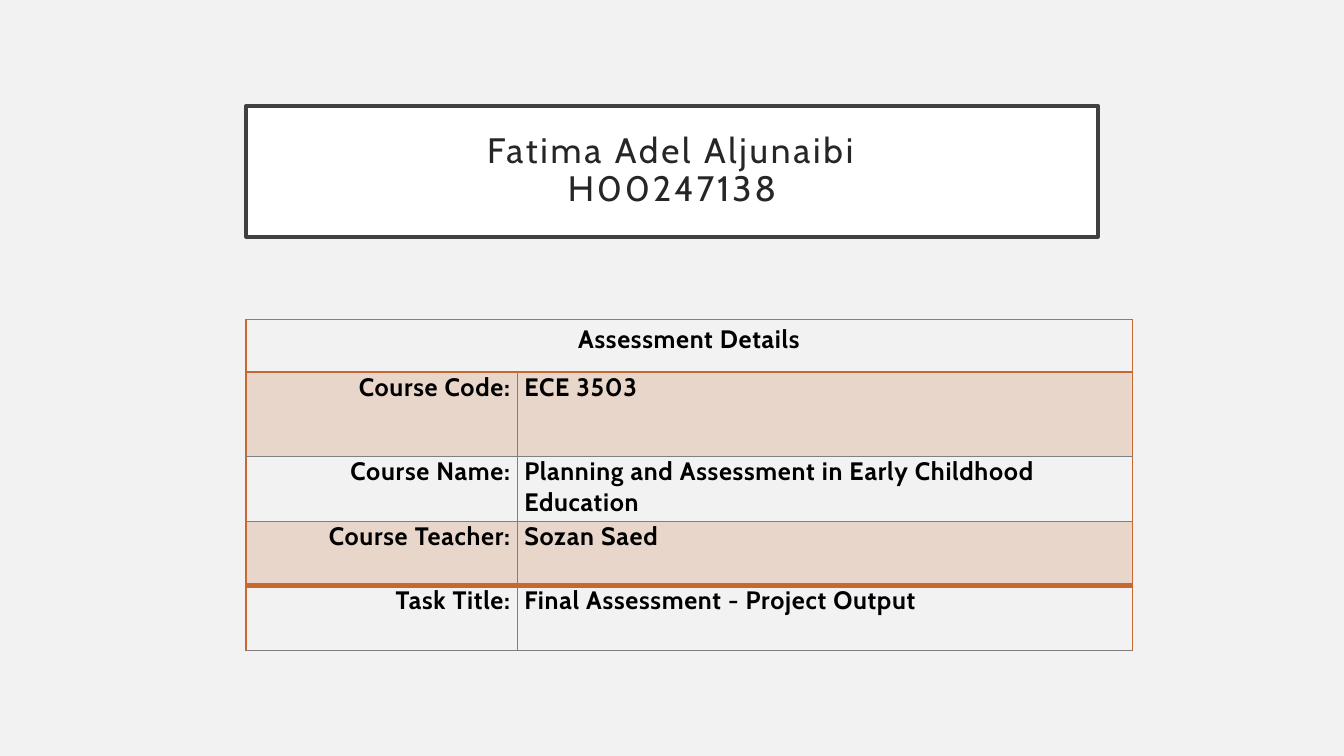
from lxml.etree import SubElement
from pptx import Presentation
from pptx.dml.color import RGBColor
from pptx.enum.shapes import MSO_SHAPE as Shape
from pptx.enum.text import MSO_ANCHOR as Anchor, PP_ALIGN as Align
from pptx.oxml import parse_xml
from pptx.oxml.ns import nsdecls, qn
from pptx.util import Inches, Pt

FONT = "Cabin"
ORANGE, GREY = "C96731", "808080"
LEFT = 2.44
DETAILS = [
    ("Course Code:", "ECE 3503"),
    ("Course Name:", "Planning and Assessment in Early Childhood Education"),
    ("Course Teacher:", "Sozan Saed"),
    ("Task Title:", "Final Assessment - Project Output"),
]
COLUMN_WIDTHS = [2.69, 6.1]
ROW_HEIGHTS = [0.52, 0.84, 0.64, 0.64, 0.64]
# Horizontal rules from the top edge to the bottom edge: colour, points
RULES = [(GREY, 0.75), (ORANGE, 2), (GREY, 0.75), (GREY, 0.75),
         (ORANGE, 4), (GREY, 0.75)]


def color(value):
    return RGBColor.from_string(value)


def style_paragraph(paragraph, size, ink, align, tracking, bold=False):
    paragraph.alignment = align
    font = paragraph.font
    font.name, font.size, font.bold = FONT, Pt(size), bold
    font.color.rgb = color(ink)
    for run in paragraph.runs:
        run.font._element.set("spc", str(int(tracking * 100)))


def add_title(slide, left, top, width, height):
    box = slide.shapes.add_shape(Shape.RECTANGLE, Inches(left), Inches(top),
                                 Inches(width), Inches(height))
    box.shadow.inherit = False
    box.fill.solid()
    box.fill.fore_color.rgb = color("FFFFFF")
    box.line.color.rgb = color("404040")
    box.line.width = Pt(2.5)
    frame = box.text_frame
    frame.word_wrap = True
    frame.vertical_anchor = Anchor.MIDDLE
    frame.text = "Fatima Adel Aljunaibi\vH00247138"
    name = frame.paragraphs[0]
    name.line_spacing = 0.9
    style_paragraph(name, 25.2, "262626", Align.CENTER, 2)


def set_borders(cell, **edges):
    properties = cell._tc.get_or_add_tcPr()
    for index, side in enumerate("LRTB"):
        ink, points = edges[side]
        properties.insert(index, parse_xml(
            f'<a:ln{side} {nsdecls("a")} w="{Pt(points)}"><a:solidFill>'
            f'<a:srgbClr val="{ink}"/></a:solidFill></a:ln{side}>'))


def fill_cell(cell, tinted):
    if not tinted:
        cell.fill.background()
        return
    cell.fill.solid()
    cell.fill.fore_color.rgb = color(ORANGE)
    tint = cell._tc.tcPr.find(".//" + qn("a:srgbClr"))
    SubElement(tint, qn("a:alpha"), val="20000")


def write_cell(cell, text, align):
    cell.margin_left = cell.margin_right = Inches(0.07)
    cell.margin_top = cell.margin_bottom = 0
    cell.text = text
    paragraph = cell.text_frame.paragraphs[0]
    paragraph.space_before, paragraph.space_after = Pt(6), Pt(3)
    style_paragraph(paragraph, 18, "000000", align, 0.5, bold=True)
    return paragraph


def add_details(slide, left, top):
    table = slide.shapes.add_table(
        len(ROW_HEIGHTS), len(COLUMN_WIDTHS), Inches(left), Inches(top),
        Inches(sum(COLUMN_WIDTHS)), Inches(sum(ROW_HEIGHTS))).table
    table.first_row = table.horz_banding = False
    for column, width in zip(table.columns, COLUMN_WIDTHS):
        column.width = Inches(width)
    for row, height in zip(table.rows, ROW_HEIGHTS):
        row.height = Inches(height)

    # Heading across both columns
    heading = table.cell(0, 0)
    heading.merge(table.cell(0, 1))
    write_cell(heading, "Assessment Details", Align.CENTER).line_spacing = 1.15

    # Labels and values
    for row, pair in enumerate(DETAILS, start=1):
        for column, align in enumerate((Align.RIGHT, Align.LEFT)):
            write_cell(table.cell(row, column), pair[column], align)

    # Tinted bands and rules
    outer, inner = (ORANGE, 1), (GREY, 0.75)
    for row in range(len(ROW_HEIGHTS)):
        for column in range(len(COLUMN_WIDTHS)):
            cell = table.cell(row, column)
            fill_cell(cell, tinted=row % 2 == 1)
            set_borders(cell, T=RULES[row], B=RULES[row + 1],
                        L=inner if column and row else outer,
                        R=outer if column or not row else inner)


def main():
    deck = Presentation()
    deck.slide_width, deck.slide_height = Inches(13.33), Inches(7.5)
    slide = deck.slides.add_slide(deck.slide_layouts[6])
    slide.background.fill.solid()
    slide.background.fill.fore_color.rgb = color("F2F2F2")
    add_title(slide, LEFT, 1.05, 8.45, 1.3)
    add_details(slide, LEFT, 3.17)
    deck.save("out.pptx")


if __name__ == "__main__":
    main()
